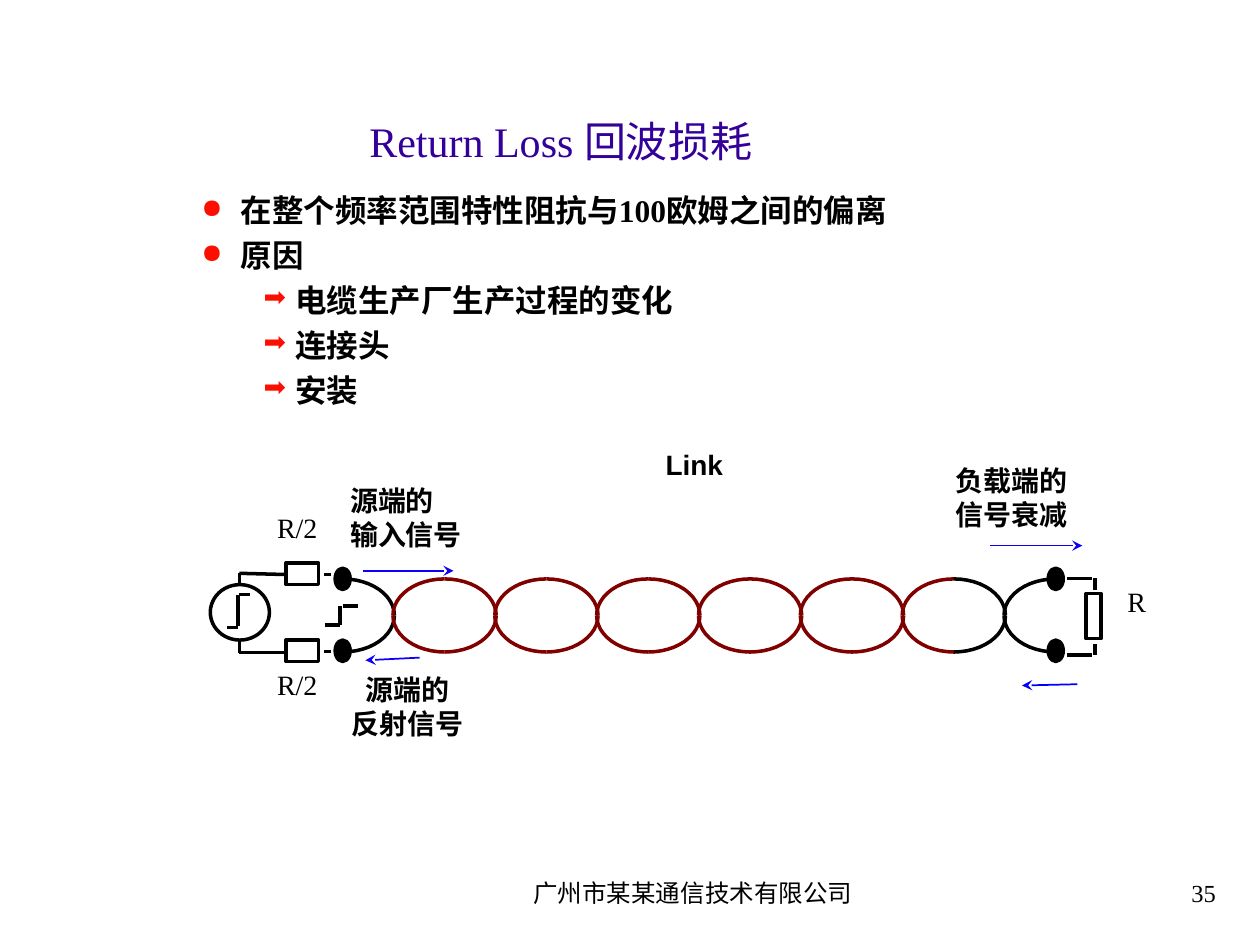
from math import cos, pi, sin

from lxml.etree import SubElement
from pptx import Presentation
from pptx.dml.color import RGBColor
from pptx.enum.shapes import MSO_CONNECTOR, MSO_SHAPE
from pptx.enum.text import MSO_ANCHOR, MSO_AUTO_SIZE, PP_ALIGN
from pptx.oxml.ns import qn
from pptx.util import Pt

BLACK = RGBColor(0x00, 0x00, 0x00)
MAROON = RGBColor(0x80, 0x00, 0x00)
BLUE = RGBColor(0x0E, 0x00, 0xF6)
PURE = RGBColor(0x00, 0x00, 0xFF)
INDIGO = RGBColor(0x33, 0x00, 0x99)
RED = RGBColor(0xFC, 0x0F, 0x01)
SERIF, SANS = "Times New Roman", "Arial"
LEFT, MID, RIGHT = PP_ALIGN.LEFT, PP_ALIGN.CENTER, PP_ALIGN.RIGHT


class Board:
    """Holds the slide and its style, and draws each kind of element in points."""

    def __init__(self, slide, weight=2, steps=12):
        self.shapes = slide.shapes
        self.weight = weight
        self.steps = steps

    def text(self, box, words, size, font=SERIF, color=BLACK, bold=False,
             align=LEFT, anchor=MSO_ANCHOR.TOP, wrap=True, grow=False):
        frame = self.shapes.add_textbox(*map(Pt, box)).text_frame
        frame.text = words
        frame.word_wrap = wrap
        frame.vertical_anchor = anchor
        frame.auto_size = MSO_AUTO_SIZE.SHAPE_TO_FIT_TEXT if grow else MSO_AUTO_SIZE.NONE
        for para in frame.paragraphs:
            para.alignment = align
            for run in para.runs:
                run.font.name, run.font.size = font, Pt(size)
                run.font.bold = bold
                run.font.color.rgb = color
        return frame

    def label(self, box, words, font=SANS, align=MID, wrap=False):
        self.text(box, words, 16, font, bold=font == SANS, align=align, wrap=wrap, grow=True)

    def bullets(self, box, items):
        frame = self.text(box, "\n".join(words for words, level in items), 18, bold=True)
        for row, (para, (words, level)) in enumerate(zip(frame.paragraphs, items)):
            para.level = level
            para.line_spacing = 0.9
            para.space_before = Pt(6.2 if row else 0)
            mark, margin, indent = (("●", 22.5, -22.5), ("➡", 53.5, -18))[level]
            props = para._p.get_or_add_pPr()
            props.set("marL", str(Pt(margin)))
            props.set("indent", str(Pt(indent)))
            tint = SubElement(props, qn("a:buClr"))
            SubElement(tint, qn("a:srgbClr"), val=str(RED))
            SubElement(props, qn("a:buSzPct"), val="85000")
            SubElement(props, qn("a:buChar"), char=mark)

    def stroke(self, shape, color, weight):
        shape.line.color.rgb = color
        shape.line.width = Pt(weight)

    def line(self, start, end, color=BLACK, arrow=False):
        wire = self.shapes.add_connector(MSO_CONNECTOR.STRAIGHT, *map(Pt, start + end))
        self.stroke(wire, color, 1 if arrow else self.weight)
        if arrow:
            SubElement(wire.get_or_add_ln(), qn("a:tailEnd"), type="stealth")
        SubElement(wire.element.spPr, qn("a:effectLst"))

    def shape(self, kind, box, fill=None):
        form = self.shapes.add_shape(kind, *map(Pt, box))
        form.shadow.inherit = False
        self.stroke(form, BLACK, self.weight)
        if fill is None:
            form.fill.background()
        else:
            form.fill.solid()
            form.fill.fore_color.rgb = fill

    def arc(self, center, radii, side, rise, color):
        (x, y), (wide, high) = center, radii
        turns = [pi / 2 * step / self.steps for step in range(self.steps + 1)]
        points = [(Pt(x + side * wide * sin(turn)), Pt(y + rise * high * cos(turn)))
                  for turn in turns]
        pen = self.shapes.build_freeform(*points[0])
        pen.add_line_segments(points[1:], close=False)
        curve = pen.convert_to_shape()
        curve.shadow.inherit = False
        curve.fill.background()
        self.stroke(curve, color, self.weight)

    def twist(self, x, y, pitch, count, radii):
        for node in range(count):
            for side in (-1, 1):
                if (node, side) in ((0, -1), (count - 1, 1)):
                    continue
                dark = node in (0, count - 1) or (node, side) == (count - 2, 1)
                for rise in (1, -1):
                    self.arc((x + node * pitch, y), radii, side, rise, BLACK if dark else MAROON)


def main():
    deck = Presentation()
    deck.slide_width, deck.slide_height = Pt(720), Pt(540)
    board = Board(deck.slides.add_slide(deck.slide_layouts[6]))

    board.text((282, 492, 228, 36), "广州市某某通信技术有限公司", 14,
               align=MID, anchor=MSO_ANCHOR.MIDDLE)
    board.text((552, 492, 150, 36), "35", 14, align=RIGHT, anchor=MSO_ANCHOR.MIDDLE)
    board.bullets((108, 108, 425.5, 139.5), (
        ("在整个频率范围特性阻抗与100欧姆之间的偏离", 0),
        ("原因", 0),
        ("电缆生产厂生产过程的变化", 1),
        ("连接头", 1),
        ("安装", 1)))
    board.text((204, 66, 252, 32.5), "Return Loss 回波损耗", 24, color=INDIGO,
               anchor=MSO_ANCHOR.BOTTOM)

    for start, end, color in (
            ((207.4, 326.2), (259.2, 326.2), BLUE),
            ((239.8, 375.8), (208.8, 377.3), BLUE),
            ((566, 311.8), (618.5, 311.8), BLUE),
            ((615.6, 391), (584, 391.7), PURE)):
        board.line(start, end, color, arrow=True)

    board.twist(195.84, 351.7, 58.2, 8, (29.5, 20.9))
    for x in (191.5, 599):
        for y in (365.8, 324.7):
            board.shape(MSO_SHAPE.OVAL, (x, y, 8.6, 12.2), BLACK)

    board.shape(MSO_SHAPE.RECTANGLE, (620.6, 339.1, 8.6, 25.9))
    for y in (365.8, 321.8):
        board.shape(MSO_SHAPE.RECTANGLE, (163.4, y, 18.7, 12.2))
    board.shape(MSO_SHAPE.OVAL, (120.2, 334.1, 33.8, 31.7))
    for start, end in (
            ((609.8, 330.5), (624.2, 330.5)),
            ((609.8, 374.4), (624.2, 374.4)),
            ((625.7, 367.9), (625.7, 374.4)),
            ((625.7, 330.5), (625.7, 337)),
            ((163.4, 373), (136.8, 373)),
            ((189.4, 372.2), (185, 372.2)),
            ((162.7, 328.3), (136.8, 327.6)),
            ((189.4, 328.3), (185, 328.3)),
            ((129.6, 358.6), (136.1, 358.6)),
            ((136.8, 339.8), (142.6, 339.8)),
            ((136.1, 357.8), (136.1, 339.8)),
            ((185.8, 357.1), (194.4, 357.1)),
            ((195.8, 346.3), (204.5, 346.3)),
            ((194.4, 357.1), (194.4, 346.3)),
            ((136.8, 373), (136.8, 366.5)),
            ((136.8, 334.1), (136.8, 327.6))):
        board.line(start, end)

    for y in (288, 378):
        board.label((151.2, y, 37.5, 26.6), "R/2", SERIF, LEFT)
    board.label((637.2, 330.5, 28.8, 26.6), "R", SERIF, LEFT, wrap=True)
    board.label((193, 272.9, 78.5, 46), "源端的\n输入信号", align=LEFT)
    board.label((193.7, 380.9, 78.5, 46), "源端的\n反射信号")
    board.label((538.6, 261.4, 78.5, 46), "负载端的\n信号衰减")
    board.label((373, 252, 47.5, 26.6), "Link")

    deck.save("out.pptx")


if __name__ == "__main__":
    main()
